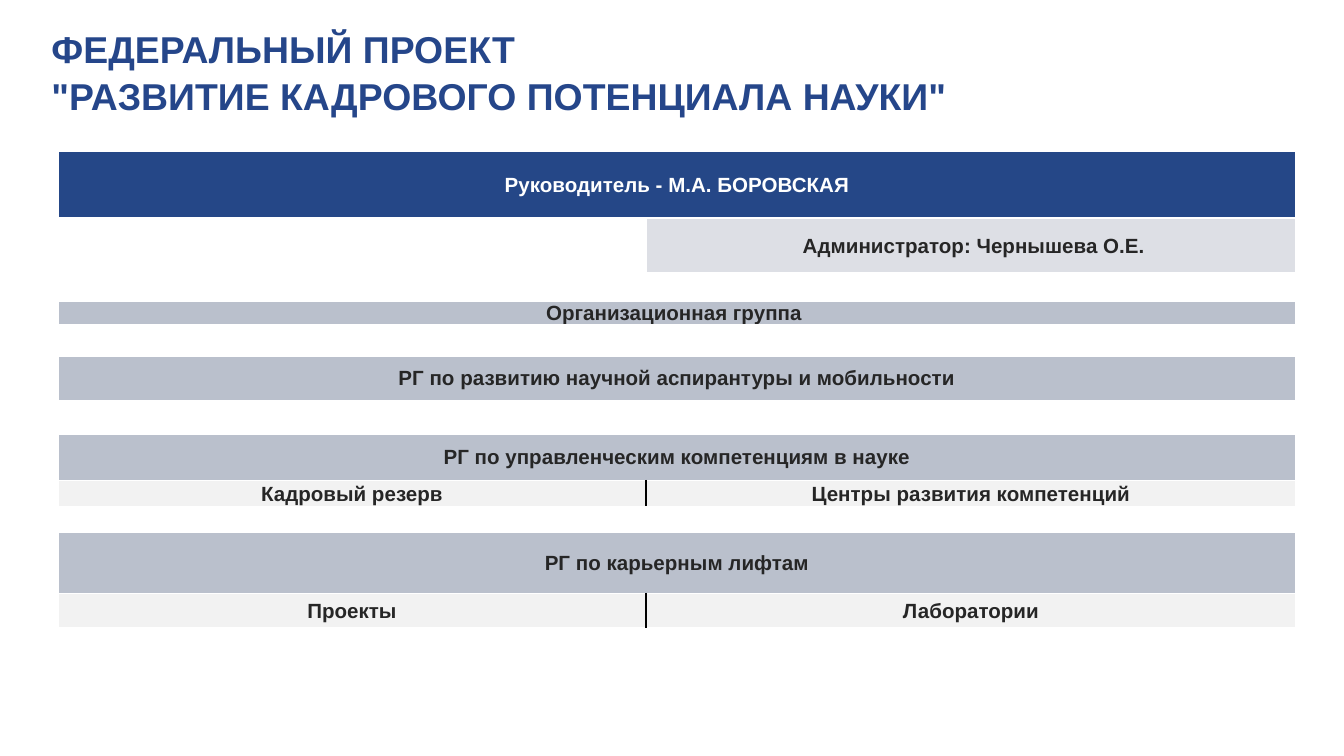
from dataclasses import dataclass

from lxml.etree import SubElement
from pptx import Presentation
from pptx.dml.color import RGBColor
from pptx.enum.text import MSO_ANCHOR, MSO_AUTO_SIZE, PP_ALIGN
from pptx.oxml.ns import qn
from pptx.util import Inches, Pt

SCALE = Inches(10) / 1344


@dataclass(frozen=True)
class Theme:
    font: str = "Arial"
    title: str = "25468A"
    head: str = "254787"
    admin: str = "DDDFE5"
    group: str = "BAC0CC"
    pale: str = "F2F2F2"
    ink: str = "262626"
    white: str = "FFFFFF"
    black: str = "000000"
    big: int = 20
    body: int = 11
    gap: int = 6


THEME = Theme()

# Row height, cell texts, fill; a single text spans both columns.
ROWS = [
    (67, ["Руководитель - М.А. БОРОВСКАЯ"], THEME.head),
    (55, ["", " Администратор: Чернышева О.Е."], THEME.admin),
    (28, ["", ""], None),
    (23, ["Организационная группа "], THEME.group),
    (31, [""], None),
    (45, ["РГ по развитию научной аспирантуры и мобильности"], THEME.group),
    (33, ["", ""], None),
    (47, ["РГ по управленческим компетенциям в науке"], THEME.group),
    (26, ["Кадровый резерв", "Центры развития компетенций"], THEME.pale),
    (26, ["", ""], None),
    (61, ["РГ по карьерным лифтам"], THEME.group),
    (34, ["Проекты", "Лаборатории"], THEME.pale),
]
COLS = [588, 650]


def px(n):
    return round(n * SCALE)


def write(frame, lines, size, color, align=PP_ALIGN.LEFT, space=1.0):
    for i, line in enumerate(lines):
        par = frame.paragraphs[0] if i == 0 else frame.add_paragraph()
        par.alignment = align
        par.line_spacing = space
        par.font.size = Pt(size)
        if not line:
            continue
        run = par.add_run()
        run.text = line
        run.font.name = THEME.font
        run.font.size = Pt(size)
        run.font.bold = True
        run.font.color.rgb = RGBColor.from_string(color)


def edge(cell, **sides):
    """Draw 1 pt cell borders, white unless a side is given a colour."""
    props = cell._tc.get_or_add_tcPr()
    for side in "LRTB":
        line = SubElement(props, qn(f"a:ln{side}"), w=str(Pt(1)))
        fill = SubElement(line, qn("a:solidFill"))
        SubElement(fill, qn("a:srgbClr"), val=sides.get(side, THEME.white))


def paint(cell, color):
    if color:
        cell.fill.solid()
        cell.fill.fore_color.rgb = RGBColor.from_string(color)
    else:
        cell.fill.background()


def add_title(slide, lines, left, top, width, height):
    title = slide.shapes.title
    title.left, title.top = px(left), px(top)
    title.width, title.height = px(width), px(height)
    frame = title.text_frame
    frame.word_wrap = True
    frame.auto_size = MSO_AUTO_SIZE.NONE
    frame.vertical_anchor = MSO_ANCHOR.MIDDLE
    write(frame, lines, THEME.big, THEME.title, space=1.05)


def add_cell(cell, text, fill, **sides):
    edge(cell, **sides)
    paint(cell, fill)
    cell.vertical_anchor = MSO_ANCHOR.MIDDLE
    cell.margin_left = cell.margin_right = cell.margin_top = px(1)
    cell.margin_bottom = 0
    color = THEME.white if fill == THEME.head else THEME.ink
    size = THEME.body if text else THEME.gap
    write(cell.text_frame, [text], size, color, align=PP_ALIGN.CENTER)


def add_team(slide, left, top):
    """Lay out the project's team as rows of one or two cells."""
    high = sum(row[0] for row in ROWS)
    table = slide.shapes.add_table(
        len(ROWS), len(COLS), px(left), px(top), px(sum(COLS)), px(high)
    ).table
    table.first_row = table.horz_banding = False
    for col, width in zip(table.columns, COLS):
        col.width = px(width)
    for r, (height, texts, fill) in enumerate(ROWS):
        table.rows[r].height = px(height)
        pair = len(texts) == 2 and all(texts)
        if len(texts) == 1:
            table.cell(r, 0).merge(table.cell(r, 1))
            texts = [*texts, ""]
        for c, text in enumerate(texts):
            cell = table.cell(r, c)
            sides = {"RL"[c]: THEME.black} if pair else {}
            shade = fill if text or cell.is_spanned else None
            add_cell(cell, text, shade, **sides)


def main():
    deck = Presentation()
    deck.slide_width, deck.slide_height = px(1344), px(756)
    slide = deck.slides.add_slide(deck.slide_layouts[5])
    lines = ["ФЕДЕРАЛЬНЫЙ ПРОЕКТ", '"РАЗВИТИЕ КАДРОВОГО ПОТЕНЦИАЛА НАУКИ"']
    add_title(slide, lines, 38, 28, 1248, 85)
    add_team(slide, 58, 151)
    deck.save("out.pptx")


if __name__ == "__main__":
    main()
